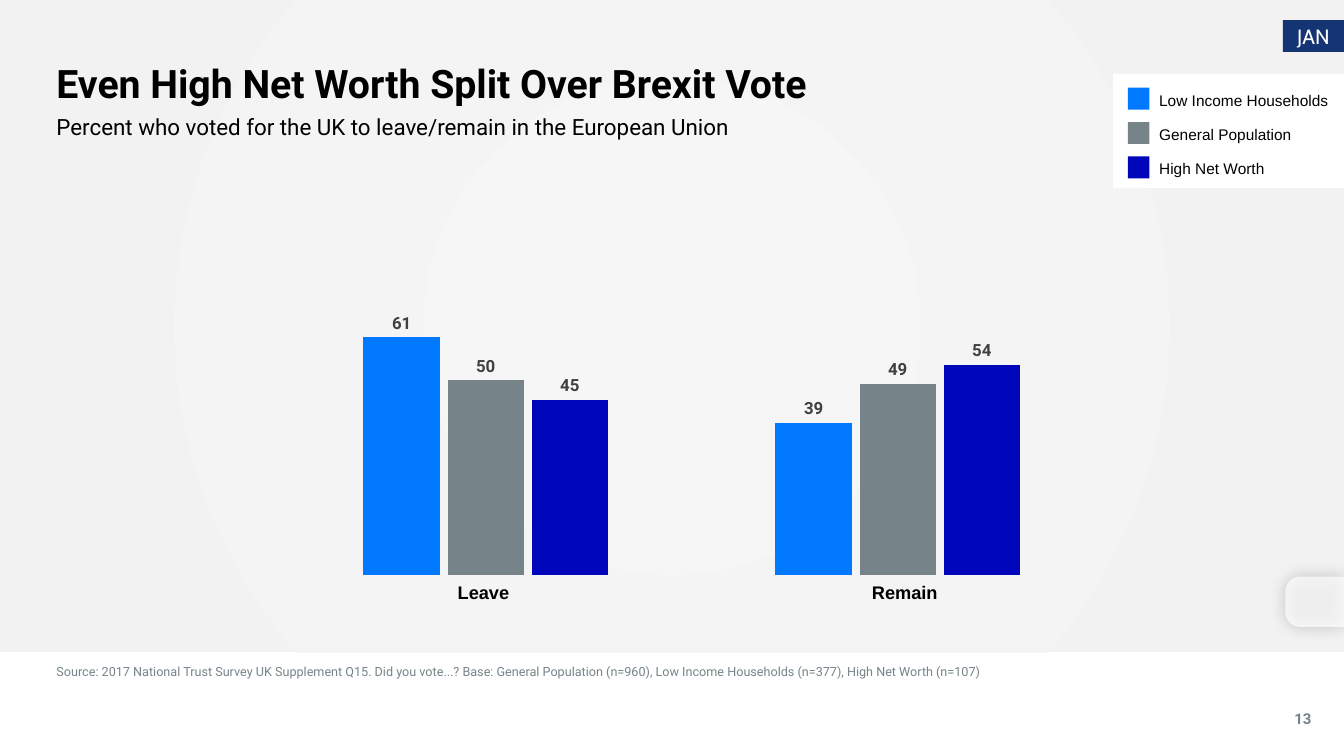
from dataclasses import dataclass

from lxml.etree import SubElement
from pptx import Presentation
from pptx.chart.data import CategoryChartData
from pptx.dml.color import RGBColor
from pptx.enum.chart import XL_CHART_TYPE, XL_LABEL_POSITION
from pptx.enum.shapes import MSO_SHAPE
from pptx.enum.text import MSO_ANCHOR, MSO_AUTO_SIZE, PP_ALIGN
from pptx.oxml import parse_xml
from pptx.oxml.ns import nsdecls, qn
from pptx.shapes.autoshape import Shape
from pptx.slide import Slide
from pptx.util import Emu, Inches, Pt

SLIDE_WIDTH, SLIDE_HEIGHT = Inches(13.33), Inches(7.5)
BLACK = RGBColor(0x00, 0x00, 0x00)
WHITE = RGBColor(0xFF, 0xFF, 0xFF)
CHARCOAL = RGBColor(0x40, 0x40, 0x40)
BLUE = RGBColor(0x00, 0x78, 0xFF)
GRAY = RGBColor(0x76, 0x84, 0x89)
DARK_BLUE = RGBColor(0x00, 0x06, 0xBA)
NAVY = RGBColor(0x14, 0x34, 0x73)
BAND_CENTER = RGBColor(0xF6, 0xF6, 0xF7)
BAND_EDGE = RGBColor(0xF2, 0xF2, 0xF2)
LEFT_MARGIN = 4.2
TEXT_WIDTH = 69.08
VOTES = ("Leave", "Remain")


@dataclass(frozen=True)
class Box:
    """A frame in percent of the slide's width and height."""

    left: float
    top: float
    width: float
    height: float

    def frame(self) -> tuple[Emu, Emu, Emu, Emu]:
        """Return left, top, width and height as slide lengths."""
        return (
            Emu(round(SLIDE_WIDTH * self.left / 100)),
            Emu(round(SLIDE_HEIGHT * self.top / 100)),
            Emu(round(SLIDE_WIDTH * self.width / 100)),
            Emu(round(SLIDE_HEIGHT * self.height / 100)),
        )


@dataclass(frozen=True)
class Style:
    """The look of one run of text."""

    size: float
    color: RGBColor = BLACK
    font: str = "Roboto"
    bold: bool = False
    align: PP_ALIGN = PP_ALIGN.LEFT


@dataclass(frozen=True)
class Group:
    """A surveyed group with its leave and remain percentages."""

    name: str
    color: RGBColor
    votes: tuple[int, int]


GROUPS = (
    Group("Low Income Households", BLUE, (61, 39)),
    Group("General Population", GRAY, (50, 49)),
    Group("High Net Worth", DARK_BLUE, (45, 54)),
)


def write(shape: Shape, text: str, style: Style, anchor: MSO_ANCHOR = MSO_ANCHOR.TOP, wrap: bool = True) -> None:
    """Fill a shape with one styled run and no insets."""
    frame = shape.text_frame
    frame.auto_size = MSO_AUTO_SIZE.NONE
    frame.word_wrap = wrap
    frame.vertical_anchor = anchor
    frame.margin_left = frame.margin_top = frame.margin_right = frame.margin_bottom = 0
    paragraph = frame.paragraphs[0]
    paragraph.alignment = style.align
    run = paragraph.add_run()
    run.text = text
    run.font.size = Pt(style.size)
    run.font.name = style.font
    run.font.bold = style.bold
    run.font.color.rgb = style.color


def add_text(slide: Slide, box: Box, text: str, style: Style, wrap: bool = True) -> None:
    """Add a text box."""
    write(slide.shapes.add_textbox(*box.frame()), text, style, wrap=wrap)


def add_block(slide: Slide, box: Box, color: RGBColor, kind: MSO_SHAPE = MSO_SHAPE.RECTANGLE) -> Shape:
    """Add a filled shape without outline or shadow."""
    shape = slide.shapes.add_shape(kind, *box.frame())
    shape.shadow.inherit = False
    shape.fill.solid()
    shape.fill.fore_color.rgb = color
    shape.line.fill.background()
    return shape


def add_band(slide: Slide) -> None:
    """Add the radial gradient band behind everything else."""
    band = add_block(slide, Box(0, 0, 100, 86.27), BAND_EDGE)
    gradient = parse_xml(
        f'<a:gradFill {nsdecls("a")} rotWithShape="1"><a:gsLst>'
        f'<a:gs pos="0"><a:srgbClr val="{BAND_CENTER}"/></a:gs>'
        f'<a:gs pos="100000"><a:srgbClr val="{BAND_EDGE}"/></a:gs></a:gsLst>'
        '<a:path path="circle"><a:fillToRect l="50000" t="50000" r="50000" b="50000"/></a:path>'
        "</a:gradFill>"
    )
    properties = band._element.spPr
    properties.replace(properties.find(qn("a:solidFill")), gradient)
    slide.shapes._spTree.insert(2, band._element)


def add_headings(slide: Slide) -> None:
    """Place the title and its subtitle."""
    title = slide.shapes.title
    title.left, title.top, title.width, title.height = Box(LEFT_MARGIN, 7.6, 74.78, 6.8).frame()
    write(title, "Even High Net Worth Split Over Brexit Vote", Style(28, bold=True), MSO_ANCHOR.MIDDLE)
    add_text(
        slide,
        Box(LEFT_MARGIN, 14.93, TEXT_WIDTH, 7.73),
        "Percent who voted for the UK to leave/remain in the European Union",
        Style(16),
    )


def add_vote_chart(slide: Slide) -> None:
    """Add the clustered columns and their category names."""
    data = CategoryChartData()
    data.categories = VOTES
    for group in GROUPS:
        data.add_series(group.name, group.votes)
    box = Box(18.53, 23.07, 63.6, 54.8)
    chart = slide.shapes.add_chart(XL_CHART_TYPE.COLUMN_CLUSTERED, *box.frame(), data).chart
    chart.has_legend = chart.has_title = False
    chart.font.size = Pt(10)
    chart.font.name = "Roboto"
    chart.font.color.rgb = BLACK
    chart.value_axis.minimum_scale = 0
    chart.value_axis.maximum_scale = 100
    chart.value_axis.has_major_gridlines = False
    chart.value_axis.visible = chart.category_axis.visible = False
    plot = chart.plots[0]
    plot.gap_width, plot.overlap = 219, -10
    plot.vary_by_categories = False
    for series, group in zip(plot.series, GROUPS):
        series.format.fill.solid()
        series.format.fill.fore_color.rgb = group.color
        labels = series.data_labels
        labels.show_value = True
        labels.position = XL_LABEL_POSITION.OUTSIDE_END
        labels.font.size = Pt(12)
        labels.font.bold = True
        labels.font.name = "Roboto"
        labels.font.color.rgb = CHARCOAL
    area = chart._chartSpace.chart.plotArea
    for old_layout in area.findall(qn("c:layout")):
        area.remove(old_layout)
    area.insert(0, parse_xml(
        f'<c:layout {nsdecls("c")}><c:manualLayout><c:layoutTarget val="inner"/>'
        '<c:xMode val="edge"/><c:yMode val="edge"/><c:x val="0.036"/><c:y val="0.026"/>'
        '<c:w val="0.964"/><c:h val="0.942"/></c:manualLayout></c:layout>'
    ))
    style = Style(13, font="Arial", bold=True, align=PP_ALIGN.CENTER)
    for position, vote in enumerate(VOTES, start=1):
        add_text(slide, Box(31.35 * position, 76.93, 9.23, 7.47), vote, style, wrap=False)


def add_legend(slide: Slide) -> None:
    """Add the legend panel with a swatch and a name per group."""
    add_block(slide, Box(82.8, 9.75, 17.2, 15.15), WHITE)
    for row, group in enumerate(GROUPS):
        offset = 4.55 * row
        add_text(slide, Box(86.25, 12 + offset, 13.65, 2.4), group.name, Style(11, font="Arial"))
        add_block(slide, Box(83.93, 11.6 + offset, 1.6, 2.9), group.color)


def add_side_tab(slide: Slide) -> None:
    """Add the translucent tab with a soft shadow at the right edge."""
    tab = add_block(slide, Box(95.93, 75.73, 3.75, 7.73), WHITE, MSO_SHAPE.ROUND_2_SAME_RECTANGLE)
    tab.rotation = 270
    tab.adjustments[0] = 0.296
    properties = tab._element.spPr
    SubElement(properties.find(qn("a:solidFill"))[0], qn("a:alpha"), val="72000")
    shadow = SubElement(properties.find(qn("a:effectLst")), qn("a:outerShdw"), blurRad=str(Pt(12)), dist="0")
    color = SubElement(shadow, qn("a:srgbClr"), val=str(BLACK))
    SubElement(color, qn("a:alpha"), val="25000")


def main() -> None:
    """Build and save the slide."""
    presentation = Presentation()
    presentation.slide_width, presentation.slide_height = SLIDE_WIDTH, SLIDE_HEIGHT
    slide = presentation.slides.add_slide(presentation.slide_layouts[5])
    add_band(slide)
    add_headings(slide)
    add_text(
        slide,
        Box(LEFT_MARGIN, 87.87, TEXT_WIDTH, 6.93),
        "Source: 2017 National Trust Survey UK Supplement Q15. Did you vote...? Base: General Population "
        "(n=960), Low Income Households (n=377), High Net Worth (n=107)",
        Style(9, GRAY),
    )
    add_text(slide, Box(95.63, 93.87, 2.63, 6), "13", Style(10.7, GRAY, bold=True, align=PP_ALIGN.CENTER))
    add_vote_chart(slide)
    month = add_block(slide, Box(95.45, 2.67, 4.55, 4.2), NAVY)
    write(month, "JAN", Style(14.7, WHITE, "Cabin", align=PP_ALIGN.CENTER), MSO_ANCHOR.MIDDLE)
    add_legend(slide)
    add_side_tab(slide)
    presentation.save("out.pptx")


if __name__ == "__main__":
    main()
